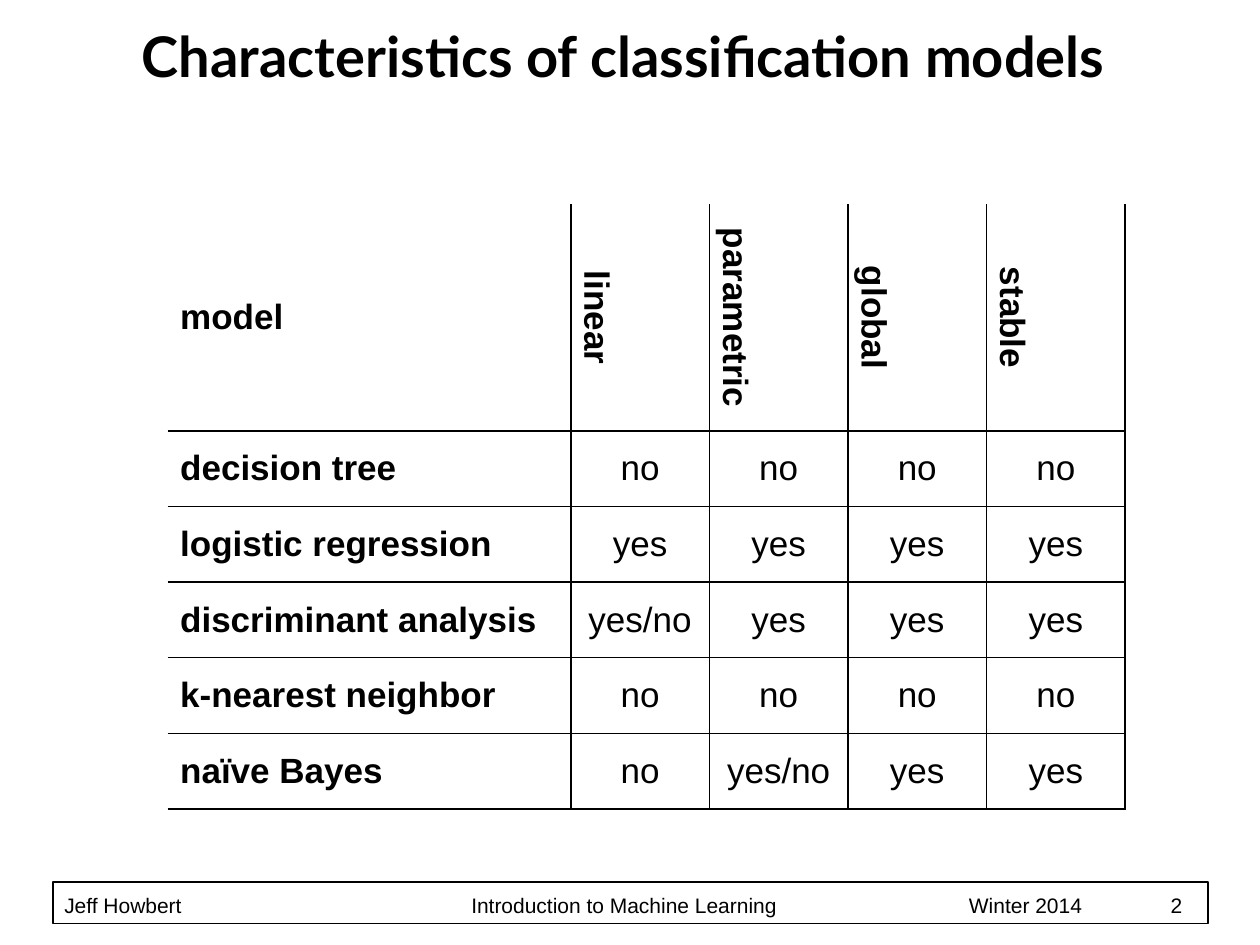
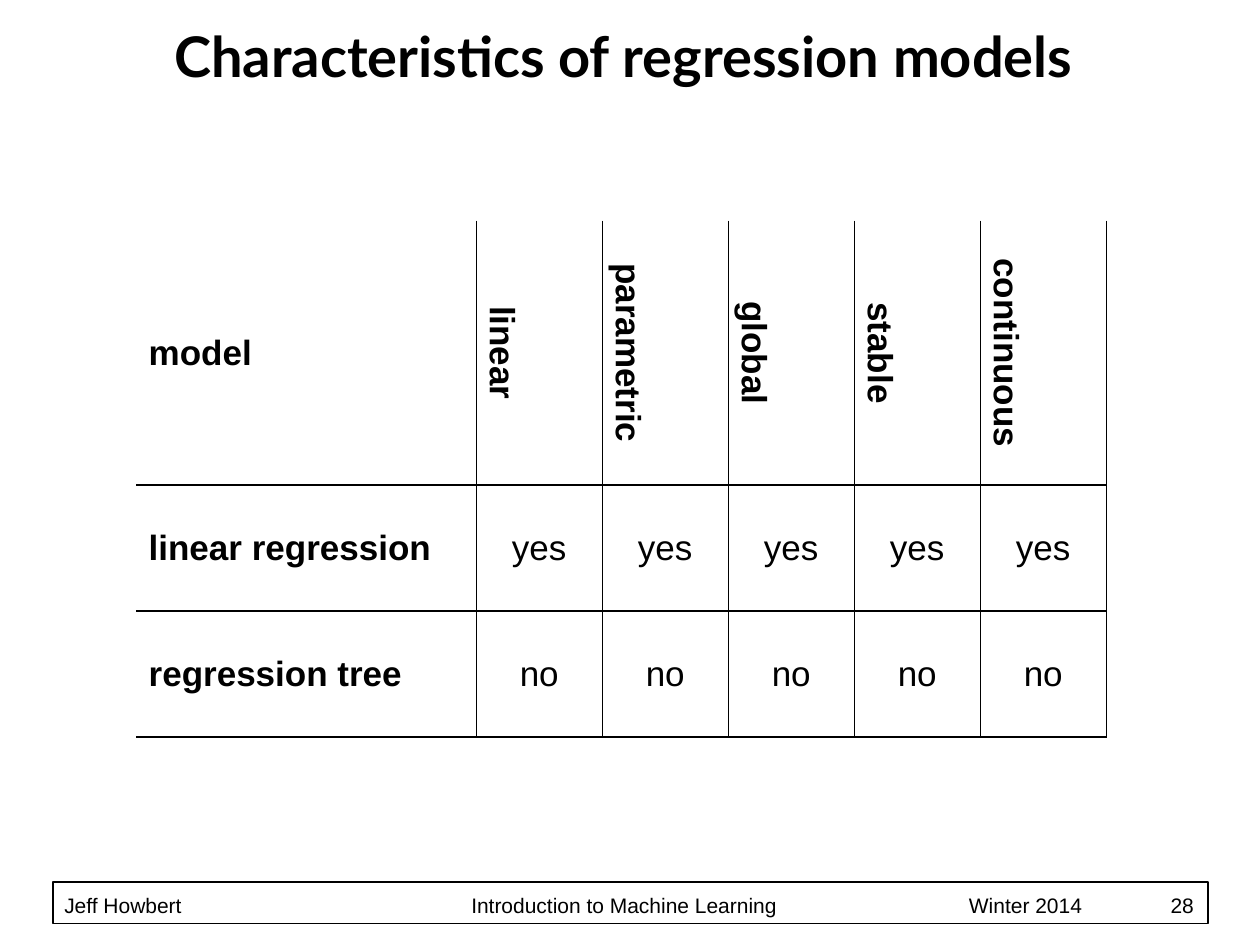
from lxml import etree
from pptx import Presentation
from pptx.dml.color import RGBColor
from pptx.enum.shapes import MSO_SHAPE
from pptx.enum.text import MSO_ANCHOR, PP_ALIGN
from pptx.oxml.ns import qn
from pptx.util import Emu, Pt

# Content
FOOTER_PARTS = ["Jeff Howbert", "Introduction to Machine Learning", "Winter 2014"]
SLIDES = [
    {
        "title": "Characteristics of classification models",
        "number": 2,
        "origin": (133, 162),
        "model_width": 320, "trait_width": 110,
        "header_height": 180, "row_height": 60,
        "rows": [
            ("model", "linear", "parametric", "global", "stable"),
            ("decision tree", "no", "no", "no", "no"),
            ("logistic regression", "yes", "yes", "yes", "yes"),
            ("discriminant analysis", "yes/no", "yes", "yes", "yes"),
            ("k-nearest neighbor", "no", "no", "no", "no"),
            ("naïve Bayes", "no", "yes/no", "yes", "yes"),
        ],
    },
    {
        "title": "Characteristics of regression models",
        "number": 28,
        "origin": (108, 175),
        "model_width": 270, "trait_width": 100,
        "header_height": 210, "row_height": 100,
        "rows": [
            ("model", "linear", "parametric", "global", "stable", "continuous"),
            ("linear regression", "yes", "yes", "yes", "yes", "yes"),
            ("regression tree", "no", "no", "no", "no", "no"),
        ],
    },
]

# Shared style: 100 px to the inch
PX = 9144
SLIDE_SIZE = (1000, 750)
TITLE_BOX = (42, 17, 906, 58)
FOOTER_FRAME = (42, 700, 917, 33)
FOOTER_BOX = (42, 700, 915, 28)
FOOTER_INSET = 9
FOOTER_TABS = (323, 718, 878)
BLACK = RGBColor(0, 0, 0)
WHITE = RGBColor(255, 255, 255)
TITLE_FONT, BODY_FONT = "Lato", "Arial"
CENTER, LEFT = PP_ALIGN.CENTER, PP_ALIGN.LEFT
MIDDLE, BOTTOM = MSO_ANCHOR.MIDDLE, MSO_ANCHOR.BOTTOM
RECTANGLE = MSO_SHAPE.RECTANGLE


def px(*lengths):
    return [Emu(length * PX) for length in lengths]


def style_font(paragraph, name, size, bold=False):
    for run in paragraph.runs:
        run.font.name = name
        run.font.size = Pt(size)
        run.font.bold = bold
        run.font.color.rgb = BLACK


def add_title(slide, title):
    frame = slide.shapes.add_textbox(*px(*TITLE_BOX)).text_frame
    frame.word_wrap = True
    frame.vertical_anchor = BOTTOM
    paragraph = frame.paragraphs[0]
    paragraph.text = title
    paragraph.alignment = CENTER
    paragraph.line_spacing = Pt(36)
    style_font(paragraph, TITLE_FONT, 32, True)


def add_footer(slide, number):
    border = slide.shapes.add_shape(RECTANGLE, *px(*FOOTER_FRAME))
    border.shadow.inherit = False
    border.fill.solid()
    border.fill.fore_color.rgb = WHITE
    border.line.color.rgb = BLACK
    border.line.width = Pt(1)

    frame = slide.shapes.add_textbox(*px(*FOOTER_BOX)).text_frame
    frame.word_wrap = True
    frame.vertical_anchor = BOTTOM
    frame.margin_left, = px(FOOTER_INSET)
    frame.margin_top = frame.margin_right = frame.margin_bottom = 0
    paragraph = frame.paragraphs[0]
    paragraph.text = "\t".join([*FOOTER_PARTS, str(number)])
    paragraph.line_spacing = Pt(20)
    tab_list = etree.SubElement(paragraph._p.get_or_add_pPr(), qn("a:tabLst"))
    for position in px(*FOOTER_TABS):
        etree.SubElement(tab_list, qn("a:tab"), pos=str(position), algn="l")
    style_font(paragraph, BODY_FONT, 12)


def set_borders(cell, hidden):
    properties = cell._tc.get_or_add_tcPr()
    for index, side in enumerate("LRTB"):
        line = etree.Element(qn(f"a:ln{side}"), w=str(Pt(1)))
        if side in hidden:
            etree.SubElement(line, qn("a:noFill"))
        else:
            fill = etree.SubElement(line, qn("a:solidFill"))
            etree.SubElement(fill, qn("a:srgbClr"), val=str(BLACK))
        properties.insert(index, line)


def add_model_table(slide, content):
    rows = content["rows"]
    widths = px(content["model_width"], *[content["trait_width"]] * (len(rows[0]) - 1))
    heights = px(content["header_height"], *[content["row_height"]] * (len(rows) - 1))
    table = slide.shapes.add_table(len(rows), len(rows[0]), *px(*content["origin"]),
                                   sum(widths), sum(heights)).table
    for column, width in zip(table.columns, widths):
        column.width = width
    for row, height in zip(table.rows, heights):
        row.height = height

    for row_index, row in enumerate(rows):
        for column_index, value in enumerate(row):
            is_header, is_model = row_index == 0, column_index == 0
            cell = table.cell(row_index, column_index)
            cell.text_frame.text = value
            cell.vertical_anchor = MIDDLE
            cell.fill.background()
            # The outer top and left edges stay open
            set_borders(cell, ("T" if is_header else "") + ("L" if is_model else ""))
            if is_header and not is_model:
                cell._tc.get_or_add_tcPr().set("vert", "vert")
            paragraph = cell.text_frame.paragraphs[0]
            paragraph.alignment = LEFT if is_model else CENTER
            style_font(paragraph, BODY_FONT, 20, is_header or is_model)


def main():
    presentation = Presentation()
    presentation.slide_width, presentation.slide_height = px(*SLIDE_SIZE)
    for content in SLIDES:
        slide = presentation.slides.add_slide(presentation.slide_layouts[6])
        add_footer(slide, content["number"])
        add_title(slide, content["title"])
        add_model_table(slide, content)
    presentation.save("out.pptx")


if __name__ == "__main__":
    main()
